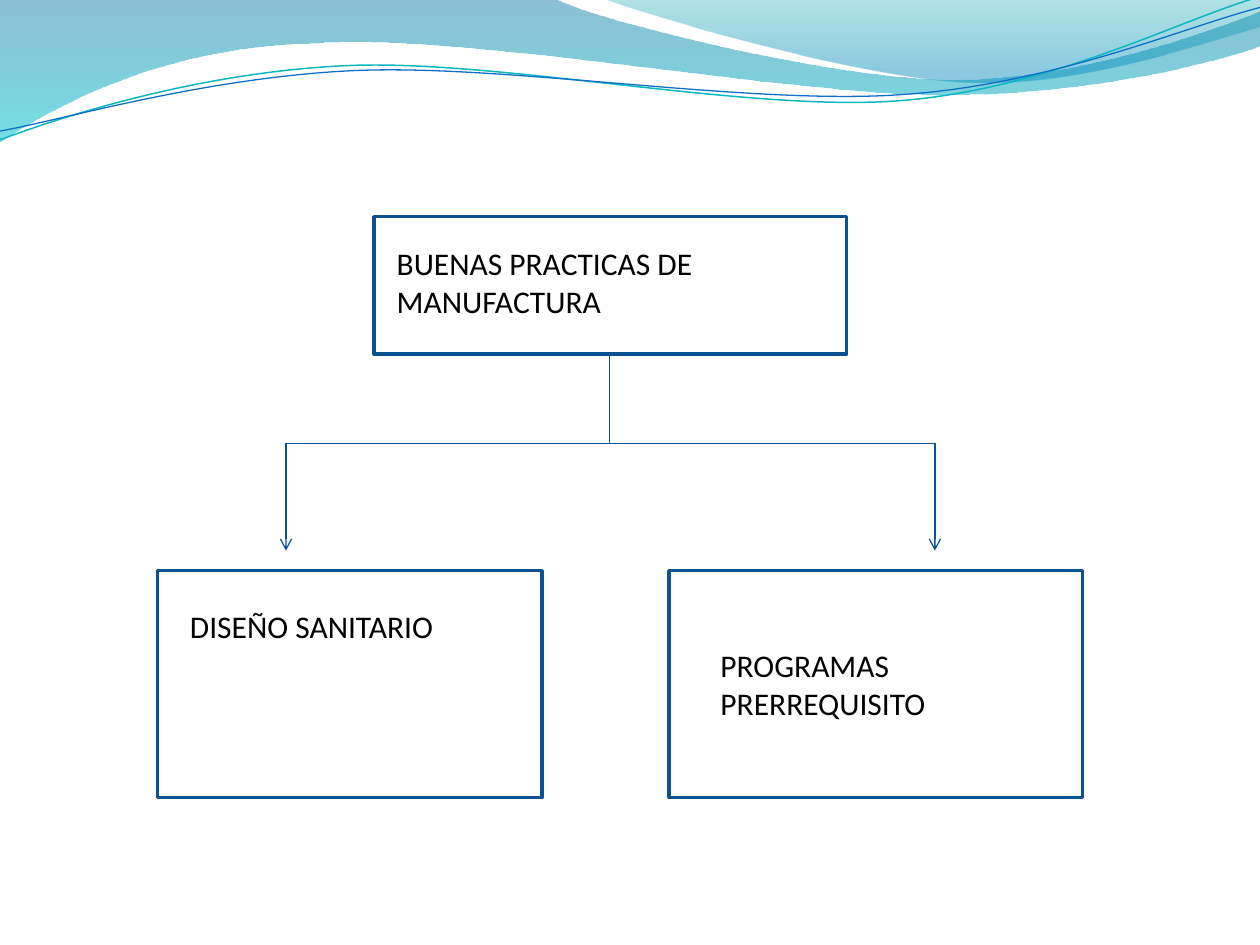
"""Build a slide with a wave header and a tree of three boxes."""
from dataclasses import dataclass
from math import cos, radians, sin

from lxml import etree
from pptx import Presentation
from pptx.dml.color import RGBColor
from pptx.enum.shapes import MSO_CONNECTOR, MSO_SHAPE
from pptx.enum.text import MSO_ANCHOR, MSO_AUTO_SIZE
from pptx.oxml.ns import qn
from pptx.util import Inches, Pt

BOX = MSO_SHAPE.FLOWCHART_PROCESS
LINE = MSO_CONNECTOR.STRAIGHT
TOP, MIDDLE = MSO_ANCHOR.TOP, MSO_ANCHOR.MIDDLE
GROW = MSO_AUTO_SIZE.SHAPE_TO_FIT_TEXT
TILT = 2.7
FONT = {"name": "Calibri", "size": Pt(18)}
FRAME = {"word_wrap": True, "auto_size": GROW}


@dataclass
class Curve:
    start: tuple
    bends: list


@dataclass
class Band:
    curves: list
    stops: list


@dataclass
class Wave:
    curve: Curve
    hub: tuple
    color: str
    width: float


@dataclass
class Node:
    text: str
    box: tuple
    label: tuple
    anchor: MSO_ANCHOR = TOP


@dataclass
class Link:
    start: tuple
    end: tuple
    arrow: bool = False


BANDS = [
    Band(
        [
            Curve((0, 0), []),
            Curve((4.4, -0.01), [(4.76, 0.17, 6.64, 0.63, 7.58, 0.63),
                                 (8.53, 0.63, 9.58, 0.26, 10, 0.09)]),
            Curve((10.01, 0.36), [(9.83, 0.44, 8.7, 0.76, 7.46, 0.75),
                                  (6.22, 0.75, 3.82, 0.28, 2.57, 0.34),
                                  (1.29, 0.36, 0.46, 0.83, -0.01, 1.13)]),
            Curve((0, 0), []),
        ],
        [(0, "0074A1", 45), (1, "00C6CF", 55)],
    ),
    Band(
        [
            Curve((4.79, -0.01), [(5.09, 0.11, 6.82, 0.62, 7.69, 0.65),
                                  (8.56, 0.69, 9.61, 0.32, 10, 0.21)]),
            Curve((10, 0), []),
            Curve((4.79, -0.01), []),
        ],
        [(0, "00A1A9", 30), (0.8, "008BBF", 45)],
    ),
]
WAVES = [
    Wave(Curve((0, 1.11), [(0.48, 0.93, 1.58, 0.57, 2.77, 0.52),
                           (3.95, 0.47, 5.93, 0.89, 7.13, 0.8),
                           (8.33, 0.71, 9.38, 0.15, 9.98, -0.02)]),
         (4.99, 0.57), "0AB8BF", 0.85),
    Wave(Curve((0, 1.04), [(0.47, 0.96, 1.64, 0.61, 2.83, 0.56),
                           (4.03, 0.51, 5.97, 0.84, 7.17, 0.75),
                           (8.36, 0.67, 9.41, 0.21, 10, 0.06)]),
         (5, 0.59), "0F6FC6", 0.75),
]
NODES = [
    Node("DISEÑO SANITARIO", (1.25, 4.53, 3.05, 1.8), (1.41, 4.77, 2.66, 0.4)),
    Node("PROGRAMAS PRERREQUISITO", (5.31, 4.53, 3.28, 1.8), (5.62, 5.08, 2.73, 0.71)),
    Node("BUENAS PRACTICAS DE MANUFACTURA", (2.97, 1.72, 3.75, 1.09),
         (3.05, 1.88, 3.67, 0.71), MIDDLE),
]
LEFT, STEM, RIGHT = 2.27, 4.84, 7.42
FORK, TIP = 3.52, 4.37
LINKS = [
    Link((LEFT, FORK), (RIGHT, FORK)),
    Link((STEM, 2.81), (STEM, FORK)),
    Link((RIGHT, FORK), (RIGHT, TIP), True),
    Link((LEFT, FORK), (LEFT, TIP), True),
]


def paint(color, code: str) -> None:
    color.rgb = RGBColor.from_string(code)


def apply(item, values: dict) -> None:
    for key, value in values.items():
        setattr(item, key, value)


def stroke(line, code: str, width: float) -> None:
    line.fill.solid()
    paint(line.color, code)
    line.width = Pt(width)


def turn(spot: tuple, hub: tuple, angle: float) -> tuple:
    x, y = spot[0] - hub[0], spot[1] - hub[1]
    c, s = cos(radians(angle)), sin(radians(angle))
    return hub[0] + x * c - y * s, hub[1] + x * s + y * c


def bend_path(shape, curves: list) -> None:
    path = next(shape.element.iter(qn("a:path")))
    steps = iter(path.findall(qn("a:lnTo")))
    for index, curve in enumerate(curves):
        if index:
            next(steps)
        for _ in curve.bends:
            trio = [next(steps) for _ in range(3)]
            cubic = etree.Element(qn("a:cubicBezTo"))
            trio[0].addprevious(cubic)
            for step in trio:
                cubic.append(step[0])
                path.remove(step)


def draw_path(shapes, curves: list, hub: tuple = (0, 0), tilt: float = 0):
    spots = []
    for curve in curves:
        spots.append(curve.start)
        for bend in curve.bends:
            spots += [bend[:2], bend[2:4], bend[4:]]
    first, *rest = [tuple(map(Inches, turn(spot, hub, tilt))) for spot in spots]
    pen = shapes.build_freeform(*first)
    pen.add_line_segments(rest, close=spots[0] == spots[-1])
    shape = pen.convert_to_shape()
    bend_path(shape, curves)
    apply(shape, {"rotation": -tilt})
    shape.shadow.inherit = False
    return shape


def draw_band(shapes, band: Band) -> None:
    shape = draw_path(shapes, band.curves)
    shape.line.fill.background()
    shape.fill.gradient()
    shape.fill.gradient_angle = 270
    for stop, (place, code, _) in zip(shape.fill.gradient_stops, band.stops):
        stop.position = place
        paint(stop.color, code)
    tones = shape.element.spPr.iter(qn("a:srgbClr"))
    for tone, (_, _, alpha) in zip(tones, band.stops):
        etree.SubElement(tone, qn("a:alpha"), val=str(alpha * 1000))


def draw_wave(shapes, wave: Wave) -> None:
    shape = draw_path(shapes, [wave.curve], wave.hub, TILT)
    shape.fill.background()
    stroke(shape.line, wave.color, wave.width)


def draw_box(shapes, node: Node) -> None:
    shape = shapes.add_shape(BOX, *map(Inches, node.box))
    shape.shadow.inherit = False
    shape.fill.background()
    stroke(shape.line, "0B5292", 2)


def draw_label(shapes, node: Node) -> None:
    frame = shapes.add_textbox(*map(Inches, node.label)).text_frame
    apply(frame, FRAME | {"vertical_anchor": node.anchor})
    run = frame.paragraphs[0].add_run()
    run.text = node.text
    apply(run.font, FONT)
    paint(run.font.color, "000000")


def draw_link(shapes, link: Link) -> None:
    shape = shapes.add_connector(LINE, *map(Inches, link.start + link.end))
    stroke(shape.line, "095295", 0.75)
    props = shape.element.spPr
    if link.arrow:
        etree.SubElement(props.find(qn("a:ln")), qn("a:tailEnd"), type="arrow")
    etree.SubElement(props, qn("a:effectLst"))


def main() -> None:
    deck = Presentation()
    apply(deck, {"slide_width": Inches(10), "slide_height": Inches(7.5)})
    shapes = deck.slides.add_slide(deck.slide_layouts[6]).shapes
    for draw, items in [(draw_band, BANDS), (draw_wave, WAVES), (draw_box, NODES),
                        (draw_label, NODES), (draw_link, LINKS)]:
        for item in items:
            draw(shapes, item)
    deck.save("out.pptx")


if __name__ == "__main__":
    main()
